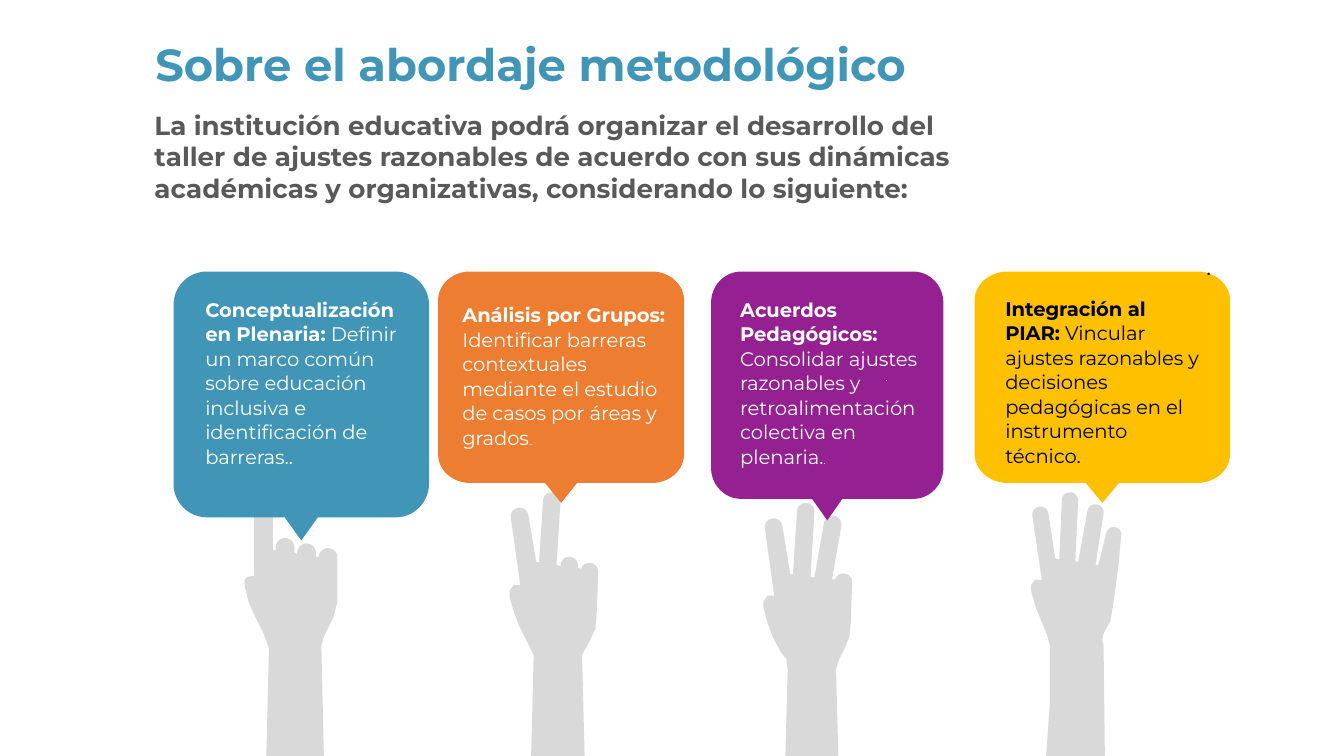
from math import atan2, cos, hypot, pi, sin

from pptx import Presentation
from pptx.dml.color import RGBColor
from pptx.enum.text import MSO_ANCHOR, MSO_AUTO_SIZE, PP_ALIGN
from pptx.util import Cm, Pt

FONT = "Montserrat"
BLUE = RGBColor(0x41, 0x96, 0xB8)
ORANGE = RGBColor(0xED, 0x7D, 0x31)
PURPLE = RGBColor(0x94, 0x20, 0x92)
YELLOW = RGBColor(0xFF, 0xC0, 0x00)
GRAY = RGBColor(0xD9, 0xD9, 0xD9)
DARK = RGBColor(0x59, 0x59, 0x59)
WHITE = RGBColor(0xFF, 0xFF, 0xFF)
BLACK = RGBColor(0x00, 0x00, 0x00)

HAND_UNIT = 0.0254  # centimetres per unit of the hand outlines
CALLOUT_TOP = 5.13

# Clockwise outlines from the forearm: a pair is a corner,
# four numbers are the two shoulders of a round fingertip.
ONE_FINGER = [
    (17, 200), (19, 116), (15, 105), (9, 93), (4, 82), (1, 70), (1, 65), (3, 63), (8, 62),
    (8, 7, 22, 7), (22, 43), (24, 43), (24, 41, 38, 41), (38, 45), (40, 46),
    (40, 45, 54, 45), (54, 48), (56, 48), (56, 48, 70, 49),
    (70, 66), (70, 81), (67, 93), (60, 107), (58, 114), (60, 200)]
TWO_FINGERS = [
    (16, 200), (18, 121), (13, 111), (7, 99), (3, 88), (0, 78), (0, 73), (3, 69), (8, 69),
    (1, 19, 14, 17), (20, 52), (22, 52), (25, 6, 38, 7), (35, 54), (38, 55),
    (38, 55, 51, 54), (51, 56), (53, 57), (53, 59, 66, 59),
    (65, 88), (64, 101), (60, 110), (54, 121), (56, 200)]
THREE_FINGERS = [
    (16, 200), (18, 124), (17, 116), (13, 111), (7, 100), (3, 89), (0, 78), (0, 73), (3, 69), (8, 69),
    (1, 19, 14, 17), (20, 53), (22, 53), (25, 6, 38, 7), (35, 55), (38, 55),
    (45, 15, 58, 17), (51, 57), (53, 57), (53, 59, 66, 59),
    (65, 88), (64, 99), (61, 107), (56, 117), (54, 124), (56, 200)]
FOUR_FINGERS = [
    (12, 200), (15, 157), (15, 114), (13, 106), (8, 94), (4, 84), (1, 73), (1, 69), (4, 65), (9, 65),
    (2, 17, 14, 16), (19, 49), (22, 50), (24, 5, 36, 7), (34, 51), (36, 52),
    (43, 14, 55, 16), (49, 54), (51, 54), (57, 30, 68, 33),
    (66, 55), (63, 78), (60, 96), (55, 105), (54, 110), (55, 114), (56, 200)]

# Outline, left, top
HANDS = [
    (ONE_FINGER, 4.6, 9.3),
    (TWO_FINGERS, 9.63, 9.3),
    (THREE_FINGERS, 14.43, 9.5),
    (FOUR_FINGERS, 19.46, 9.3),
]

# Fill, text colour, (left, width, height), text (dx, dy, width, height), (heading, detail, small dots)
CALLOUTS = [
    (BLUE, WHITE, (3.28, 4.83, 5.08), (0.5, 0.43, 3.84, 3.78),
     ("Conceptualización en Plenaria:",
      " Definir un marco común sobre educación inclusiva e identificación de barreras..", "")),
    (ORANGE, WHITE, (8.28, 4.65, 4.37), (0.36, 0.53, 4.08, 2.84),
     ("Análisis por Grupos:",
      " Identificar barreras contextuales mediante el estudio de casos por áreas y grados", "..")),
    (PURPLE, WHITE, (13.44, 4.39, 4.7), (0.45, 0.43, 3.89, 3.3),
     ("Acuerdos Pedagógicos:",
      " Consolidar ajustes razonables y retroalimentación colectiva en plenaria.", ".")),
    (YELLOW, BLACK, (18.42, 4.83, 4.37), (0.48, 0.41, 3.89, 3.33),
     ("Integración al PIAR:",
      " Vincular ajustes razonables y decisiones pedagógicas en el instrumento técnico.", "")),
]


def arc(x, y, rx, ry, start, sweep, steps=12):
    angles = [start + sweep * i / steps for i in range(steps + 1)]
    return [(x + rx * cos(a), y + ry * sin(a)) for a in angles]


def add_outline(page, points, color):
    points = [(Cm(x), Cm(y)) for x, y in points]
    builder = page.shapes.build_freeform(*points[0])
    builder.add_line_segments(points[1:], close=True)
    shape = builder.convert_to_shape()
    shape.shadow.inherit = False
    shape.fill.solid()
    shape.fill.fore_color.rgb = color
    shape.line.fill.background()


def set_font(font, size, color, bold=None):
    font.name = FONT
    font.size = Pt(size)
    font.color.rgb = color
    font.bold = bold


def add_text_box(page, left, top, width, height):
    box = page.shapes.add_textbox(Cm(left), Cm(top), Cm(width), Cm(height))
    frame = box.text_frame
    frame.word_wrap = True
    frame.margin_left = frame.margin_right = Cm(0.1)
    frame.margin_top = frame.margin_bottom = Cm(0.05)
    return frame


def add_heading(page, left, top, width, height):
    title = page.shapes.title
    title.left, title.top, title.width, title.height = Cm(left), Cm(top), Cm(width), Cm(height)
    frame = title.text_frame
    frame.auto_size = MSO_AUTO_SIZE.NONE
    frame.vertical_anchor = MSO_ANCHOR.TOP
    para = frame.paragraphs[0]
    para.text = "Sobre el abordaje metodológico"
    para.alignment = PP_ALIGN.CENTER
    set_font(para.font, 24, BLUE, True)


def add_intro(page, left, top, width, height):
    frame = add_text_box(page, left, top, width, height)
    frame.vertical_anchor = MSO_ANCHOR.MIDDLE
    para = frame.paragraphs[0]
    para.text = ("La institución educativa podrá organizar el desarrollo del taller de ajustes "
                 "razonables de acuerdo con sus dinámicas académicas y organizativas, "
                 "considerando lo siguiente:")
    set_font(para.font, 14, DARK, True)


def add_hand(page, outline, left, top):
    points = []
    for part in outline:
        if len(part) == 2:
            points.append(part)
            continue
        x1, y1, x2, y2 = part
        radius = hypot(x2 - x1, y2 - y1) / 2
        points += arc((x1 + x2) / 2, (y1 + y2) / 2, radius, radius, atan2(y1 - y2, x1 - x2), pi)
    add_outline(page, [(left + x * HAND_UNIT, top + y * HAND_UNIT) for x, y in points], GRAY)


def add_callout(page, left, top, width, height, fill, color, text_area, texts):
    # Rounded bubble with a centred pointer
    right, bottom, middle = left + width, top + height * 0.914, left + width / 2
    rx, ry, half = width * 0.13, height * 0.125, width * 0.065
    points = (arc(left + rx, top + ry, rx, ry, pi, pi / 2)
              + arc(right - rx, top + ry, rx, ry, -pi / 2, pi / 2)
              + arc(right - rx, bottom - ry, rx, ry, 0, pi / 2)
              + [(middle + half, bottom), (middle, top + height), (middle - half, bottom)]
              + arc(left + rx, bottom - ry, rx, ry, pi / 2, pi / 2))
    add_outline(page, points, fill)

    # Bold heading, plain detail and small closing dots
    dx, dy, text_width, text_height = text_area
    para = add_text_box(page, left + dx, top + dy, text_width, text_height).paragraphs[0]
    para.line_spacing = Pt(13.1)
    for text, size, bold in zip(texts, (10.5, 10.5, 5.1), (True, False, False)):
        if text:
            span = para.add_run()
            span.text = text
            set_font(span.font, size, color, bold)


def add_dot(page, left, top, size, color):
    para = add_text_box(page, left, top, 0.5, 0.5).paragraphs[0]
    para.text = "."
    para.line_spacing = Pt(13.1)
    set_font(para.font, size, color)


def main():
    deck = Presentation()
    deck.slide_width, deck.slide_height = Cm(25.4), Cm(14.28)
    page = deck.slides.add_slide(deck.slide_layouts[5])

    add_heading(page, 1.68, 0.56, 16.69, 1.27)
    add_intro(page, 2.82, 2.01, 16, 1.88)
    for outline, left, top in HANDS:
        add_hand(page, outline, left, top)
    for fill, color, (left, width, height), text_area, texts in CALLOUTS:
        add_callout(page, left, CALLOUT_TOP, width, height, fill, color, text_area, texts)

    # Stray dots on the purple and yellow callouts
    add_dot(page, 16.64, 6.73, 5.1, WHITE)
    add_dot(page, 22.7, 4.77, 12, BLACK)

    deck.save("out.pptx")


if __name__ == "__main__":
    main()
